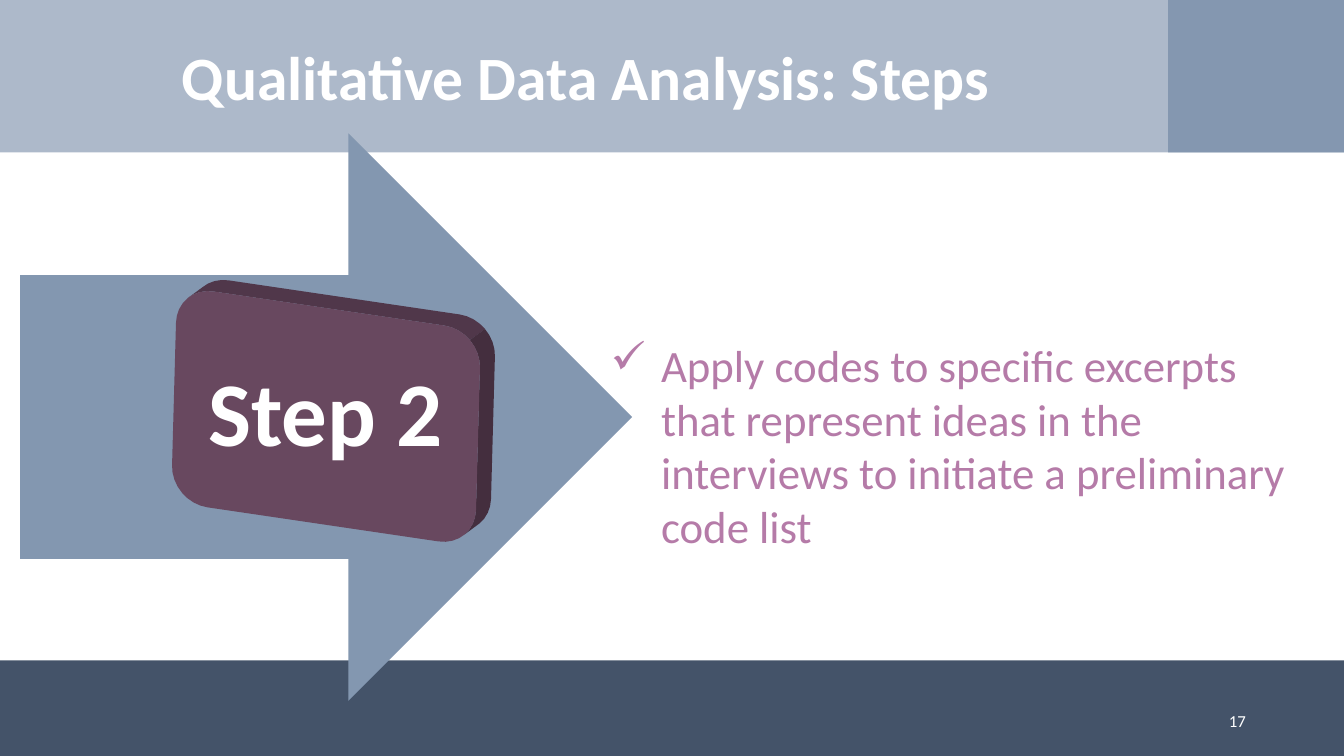
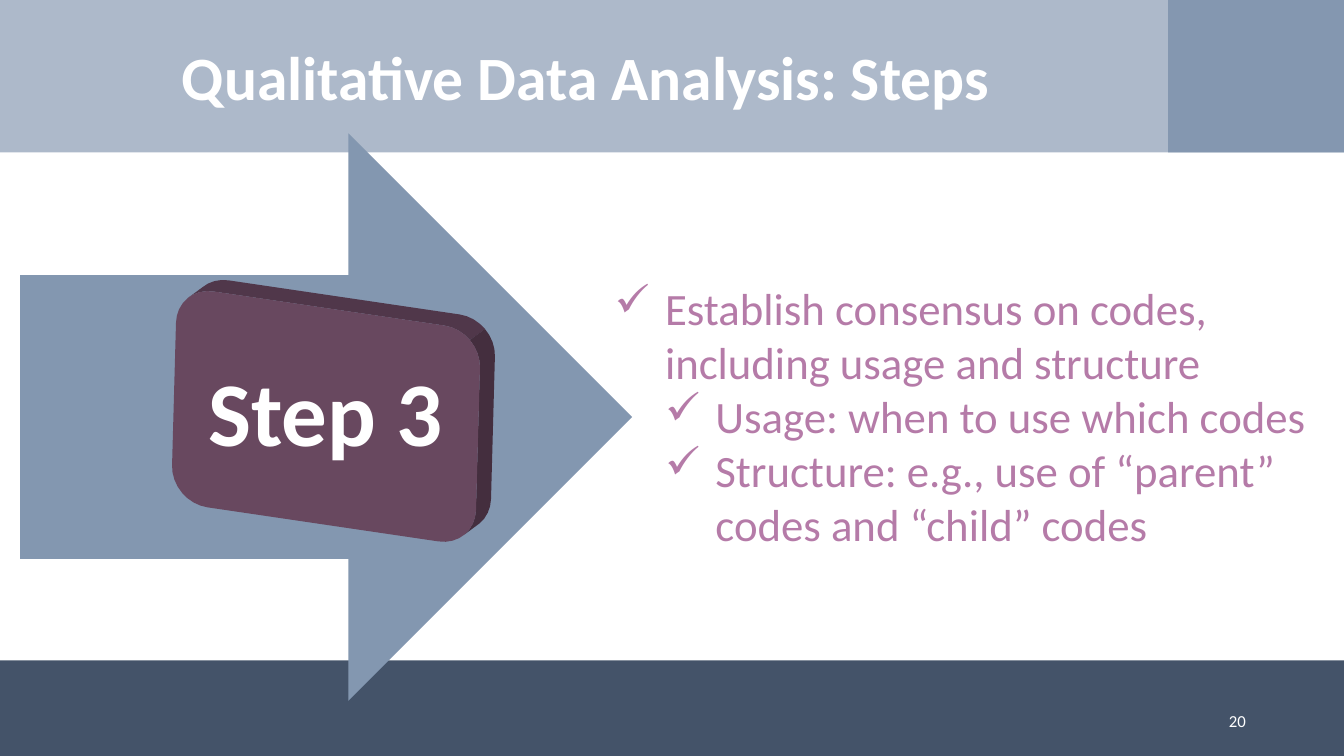
from math import cos, pi, sin

from lxml import etree
from pptx import Presentation
from pptx.dml.color import RGBColor
from pptx.enum.shapes import MSO_SHAPE as SHAPE
from pptx.enum.text import MSO_ANCHOR as ANCHOR, PP_ALIGN as ALIGN
from pptx.oxml.ns import qn
from pptx.util import Cm, Pt

WHITE = RGBColor(0xFF, 0xFF, 0xFF)
PALE_BLUE = RGBColor(0xAD, 0xB9, 0xCA)
MID_BLUE = RGBColor(0x84, 0x97, 0xB0)
ARROW_BLUE = RGBColor(0x83, 0x97, 0xB0)
NAVY = RGBColor(0x44, 0x53, 0x69)
MAUVE = RGBColor(0xB5, 0x7B, 0xA8)
BLOCK_FRONT = RGBColor(0x68, 0x48, 0x5F)
BLOCK_TOP = RGBColor(0x50, 0x37, 0x4A)
BLOCK_SIDE = RGBColor(0x44, 0x2E, 0x3E)

WIDTH, HEIGHT = 33.87, 19.05
HEADER_H, FOOTER_TOP, CORNER_X = 3.84, 16.64, 29.44

BACKDROP = [
    (SHAPE.RECTANGLE, 0, 0, WIDTH, HEADER_H, PALE_BLUE),
    (SHAPE.RECTANGLE, 0, FOOTER_TOP, WIDTH, HEIGHT - FOOTER_TOP, NAVY),
    (SHAPE.RECTANGLE, CORNER_X, 0, WIDTH - CORNER_X, HEADER_H, MID_BLUE),
    (SHAPE.RIGHT_ARROW, 0.51, 3.36, 15.42, 14.3, ARROW_BLUE),
]

TITLE = "Qualitative Data Analysis: Steps"
TITLE_FONT = {"name": "Calibri", "size": Pt(44), "bold": True}
STEP_FONT = {"name": "Calibri", "size": Pt(65), "bold": True}
BODY_FONT = {"name": "Calibri", "size": Pt(32)}
NUMBER_FONT = {"name": "Calibri", "size": Pt(12)}

# Each slide: step label, page number, body box, (level, text) bullets
STEPS = [
    ("Step 2", "17", (15.14, 8.38, 17.63, 5.74), [
        (0, "Apply codes to specific excerpts that represent ideas in the "
            "interviews to initiate a preliminary code list"),
    ]),
    ("Step 3", "20", (15.24, 6.96, 18.63, 7.09), [
        (0, "Establish consensus on codes, including usage and structure"),
        (1, "Usage: when to use which codes"),
        (1, "Structure: e.g., use of “parent” codes and “child” codes"),
    ]),
]

# The step block is a slanted rounded rectangle, extruded up and to the right
LEFT, TOP = 4.46, 7.21
ACROSS, DOWN = (7.66, 1.13), (-0.15, 5.44)
DEPTH = (0.38, -0.28)
RADIUS_U, RADIUS_V = 0.12, 0.17
ARC_STEPS = 8

front = []
for corner, (cu, cv) in enumerate([
        (RADIUS_U, RADIUS_V), (1 - RADIUS_U, RADIUS_V),
        (1 - RADIUS_U, 1 - RADIUS_V), (RADIUS_U, 1 - RADIUS_V)]):
    for i in range(ARC_STEPS + 1):
        angle = pi + (corner + i / ARC_STEPS) * pi / 2
        u = cu + RADIUS_U * cos(angle)
        v = cv + RADIUS_V * sin(angle)
        front.append((LEFT + u * ACROSS[0] + v * DOWN[0],
                      TOP + u * ACROSS[1] + v * DOWN[1]))
back = [(x + DEPTH[0], y + DEPTH[1]) for x, y in front]
mid_tl, mid_tr, mid_br = (ARC_STEPS // 2 + n * (ARC_STEPS + 1) for n in range(3))
top_edge = slice(mid_tl, mid_tr + 1)
side_edge = slice(mid_tr, mid_br + 1)
BLOCK = [
    (front[top_edge] + back[top_edge][::-1], BLOCK_TOP),
    (front[side_edge] + back[side_edge][::-1], BLOCK_SIDE),
    (front, BLOCK_FRONT),
]


def paint(sp, color):
    """Give a shape a flat fill with no outline or shadow."""
    sp.shadow.inherit = False
    sp.fill.solid()
    sp.fill.fore_color.rgb = color
    sp.line.fill.background()


def add_text(s, box, lines, font, color, align=ALIGN.LEFT, anchor=ANCHOR.MIDDLE,
             bullet=None):
    """Add a text box of (level, text) lines and return its text frame."""
    tf = s.shapes.add_textbox(*map(Cm, box)).text_frame
    tf.word_wrap = True
    tf.vertical_anchor = anchor
    for i, (level, text) in enumerate(lines):
        p = tf.paragraphs[0] if i == 0 else tf.add_paragraph()
        p.level = level
        p.alignment = align
        if bullet:
            pPr = p._p.get_or_add_pPr()
            pPr.set("marL", str(Cm(1.27 * (level + 1))))
            pPr.set("indent", str(Cm(-1.27)))
            etree.SubElement(pPr, qn("a:buChar")).set("char", bullet)
        r = p.add_run()
        r.text = text
        for key, value in font.items():
            setattr(r.font, key, value)
        r.font.color.rgb = color
    return tf


prs = Presentation()
prs.slide_width, prs.slide_height = Cm(WIDTH), Cm(HEIGHT)

for label, number, body_box, bullets in STEPS:
    s = prs.slides.add_slide(prs.slide_layouts[6])
    for kind, x, y, w, h, color in BACKDROP:
        paint(s.shapes.add_shape(kind, Cm(x), Cm(y), Cm(w), Cm(h)), color)
    for points, color in BLOCK:
        start, *rest = [(Cm(x), Cm(y)) for x, y in points]
        builder = s.shapes.build_freeform(*start)
        builder.add_line_segments(rest)
        paint(builder.convert_to_shape(), color)

    tf = add_text(s, (0, 1.02, 29.54, 2.03), [(0, TITLE)], TITLE_FONT, WHITE,
                  ALIGN.CENTER)
    tf.paragraphs[0].line_spacing = Pt(46)
    tf = add_text(s, (4.39, 7.92, 7.65, 5.16), [(0, label)], STEP_FONT, WHITE,
                  ALIGN.CENTER)
    tf.paragraphs[0].line_spacing = 0.9
    add_text(s, body_box, bullets, BODY_FONT, MAUVE, anchor=ANCHOR.TOP, bullet="✓")
    add_text(s, (29.01, 17.65, 2.64, 1.02), [(0, number)], NUMBER_FONT, WHITE,
             ALIGN.RIGHT)

prs.save("out.pptx")
